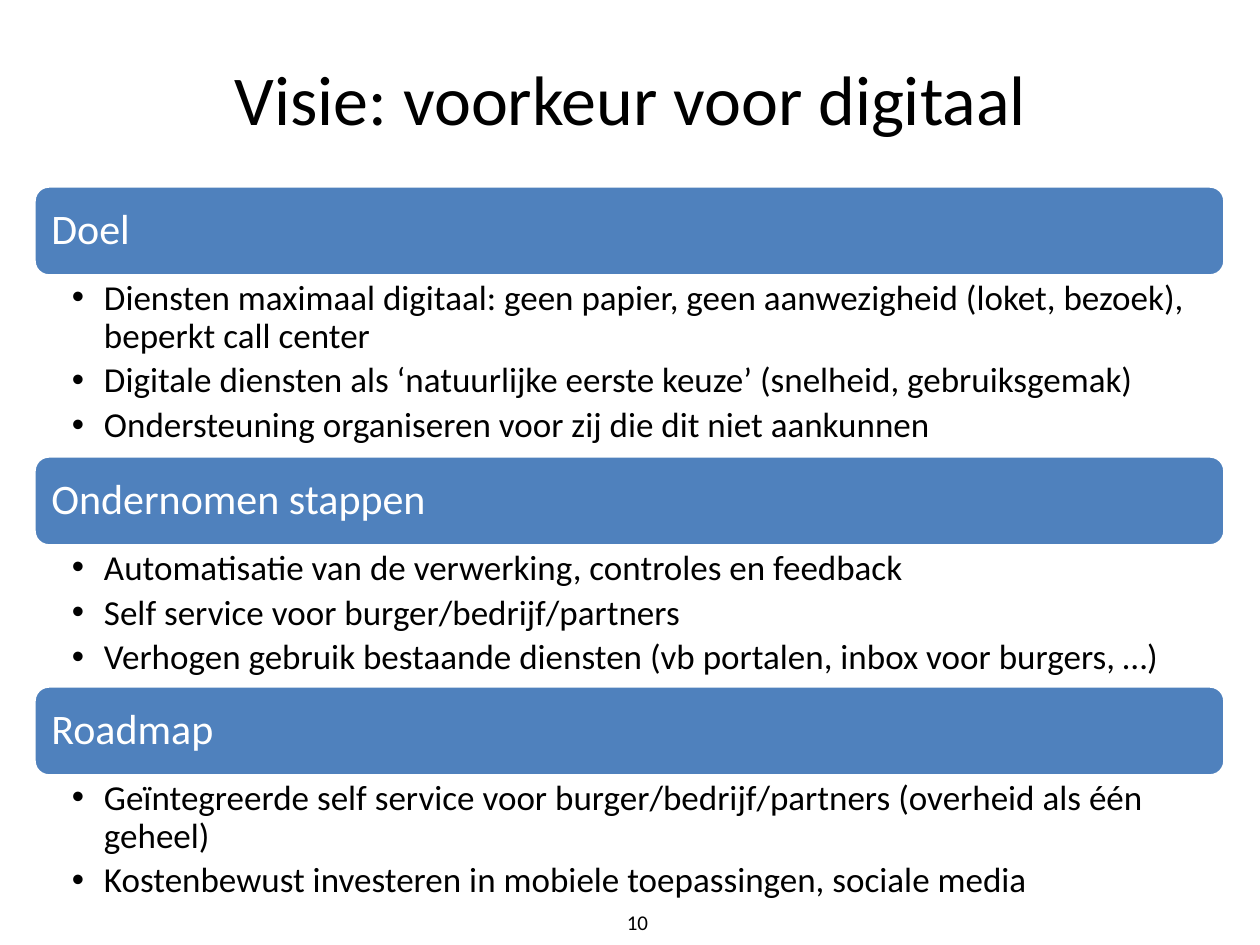
from dataclasses import dataclass

from lxml import etree
from pptx import Presentation
from pptx.dml.color import RGBColor
from pptx.enum.shapes import MSO_SHAPE
from pptx.enum.text import MSO_ANCHOR, MSO_AUTO_SIZE, PP_ALIGN
from pptx.oxml.ns import qn
from pptx.util import Emu, Pt

ROUNDED = MSO_SHAPE.ROUNDED_RECTANGLE
TOP, MIDDLE = MSO_ANCHOR.TOP, MSO_ANCHOR.MIDDLE
LEFT, CENTER = PP_ALIGN.LEFT, PP_ALIGN.CENTER
NO_FIT = MSO_AUTO_SIZE.NONE
COMPARISON_LAYOUT = 4


@dataclass(frozen=True)
class Theme:
    """Colours and type sizes of the slide."""
    font: str = "Calibri"
    text: RGBColor = RGBColor(0x00, 0x00, 0x00)
    light: RGBColor = RGBColor(0xFF, 0xFF, 0xFF)
    accent: RGBColor = RGBColor(0x4F, 0x81, 0xBD)
    title: int = 40
    heading: int = 24
    body: int = 20
    number: int = 12


THEME = Theme()
BAR_LEFT, BAR_WIDTH, BAR_HEIGHT = 34, 1191, 90
FIRST_TOP = 186
SECTIONS = [
    ("Doel", 180, [
        "Diensten maximaal digitaal: geen papier, geen aanwezigheid (loket, bezoek), beperkt call center",
        "Digitale diensten als ‘natuurlijke eerste keuze’ (snelheid, gebruiksgemak)",
        "Ondersteuning organiseren voor zij die dit niet aankunnen",
    ]),
    ("Ondernomen stappen", 140, [
        "Automatisatie van de verwerking, controles en feedback",
        "Self service voor burger/bedrijf/partners",
        "Verhogen gebruik bestaande diensten (vb portalen, inbox voor burgers, …)",
    ]),
    ("Roadmap", 132, [
        "Geïntegreerde self service voor burger/bedrijf/partners (overheid als één geheel)",
        "Kostenbewust investeren in mobiele toepassingen, sociale media",
    ]),
]


def px(n):
    """Turn whole pixels into EMU."""
    return Emu(round(n * 914400 / 126))


def place(s, left, top, width, height):
    """Set the position and size of a shape."""
    s.left, s.top, s.width, s.height = map(px, (left, top, width, height))


def set_frame(tf, anchor, left, top, right, bottom):
    """Set wrapping, anchor and insets of a text frame."""
    tf.word_wrap = True
    tf.auto_size = NO_FIT
    tf.vertical_anchor = anchor
    tf.margin_left, tf.margin_top = px(left), px(top)
    tf.margin_right, tf.margin_bottom = px(right), px(bottom)


def add_run(p, text, size, color, align):
    """Add one formatted run to a paragraph."""
    p.alignment = align
    r = p.add_run()
    r.text = text
    r.font.name = THEME.font
    r.font.size = Pt(size)
    r.font.bold = False
    r.font.color.rgb = color


def add_bullet(p):
    """Give a paragraph a round bullet and a hanging indent."""
    ppr = p._p.get_or_add_pPr()
    ppr.set("marL", str(px(32)))
    ppr.set("indent", str(px(-32)))
    etree.SubElement(ppr, qn("a:buFont")).set("typeface", "Arial")
    etree.SubElement(ppr, qn("a:buChar")).set("char", "•")


def fill_title(s, text):
    """Place and fill the title placeholder."""
    place(s, 35, 18, BAR_WIDTH, 158)
    set_frame(s.text_frame, MIDDLE, 13, 6, 13, 6)
    add_run(s.text_frame.paragraphs[0], text, THEME.title, THEME.text, CENTER)


def add_bar(slide, top, text):
    """Add a rounded heading bar."""
    s = slide.shapes.add_shape(ROUNDED, 0, 0, 0, 0)
    place(s, BAR_LEFT, top, BAR_WIDTH, BAR_HEIGHT)
    s.shadow.inherit = False
    s.fill.solid()
    s.fill.fore_color.rgb = THEME.accent
    s.line.color.rgb = THEME.light
    s.line.width = Pt(2)
    set_frame(s.text_frame, MIDDLE, 13, 13, 13, 13)
    p = s.text_frame.paragraphs[0]
    p.line_spacing = 0.9
    add_run(p, text, THEME.heading, THEME.light, LEFT)


def fill_list(s, top, height, items):
    """Place a body placeholder and fill it with bullets."""
    place(s, BAR_LEFT, top, BAR_WIDTH, height)
    tf = s.text_frame
    set_frame(tf, TOP, 38, 4, 20, 4)
    for i, item in enumerate(items):
        p = tf.add_paragraph() if i else tf.paragraphs[0]
        add_bullet(p)
        p.line_spacing = 0.9
        p.space_before = Pt(0)
        p.space_after = Pt(4)
        add_run(p, item, THEME.body, THEME.text, LEFT)


def add_page_number(slide, text):
    """Add the page number at the foot."""
    s = slide.shapes.add_textbox(0, 0, 0, 0)
    place(s, 586, 900, 103, 45)
    set_frame(s.text_frame, MIDDLE, 13, 6, 13, 6)
    add_run(s.text_frame.paragraphs[0], text, THEME.number, THEME.text, CENTER)


def main():
    """Build and save the slide."""
    prs = Presentation()
    prs.slide_width, prs.slide_height = px(1260), px(945)
    slide = prs.slides.add_slide(prs.slide_layouts[COMPARISON_LAYOUT])
    title, *bodies = slide.placeholders
    fill_title(title, "Visie: voorkeur voor digitaal")
    top = FIRST_TOP
    for body, (heading, height, items) in zip(bodies, SECTIONS):
        add_bar(slide, top, heading)
        fill_list(body, top + BAR_HEIGHT, height, items)
        top += BAR_HEIGHT + height
    for spare in bodies[len(SECTIONS):]:
        spare.element.getparent().remove(spare.element)
    add_page_number(slide, "10")
    prs.save("out.pptx")


if __name__ == "__main__":
    main()
